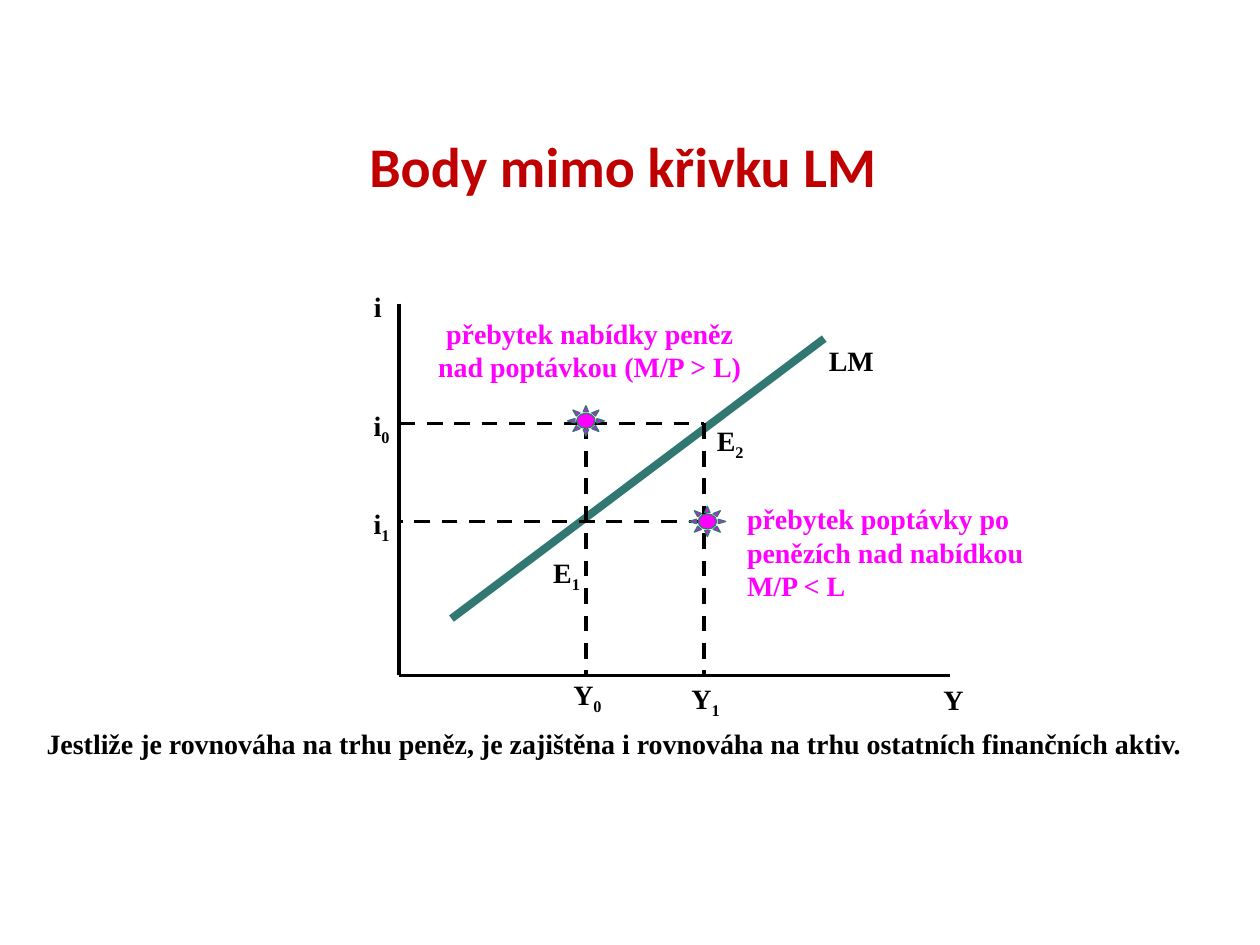
from lxml import etree
from pptx import Presentation
from pptx.dml.color import RGBColor
from pptx.enum import dml, shapes, text
from pptx.oxml.ns import qn
from pptx.util import Pt

BLACK = RGBColor(0x00, 0x00, 0x00)
RED = RGBColor(0xC0, 0x00, 0x00)
TEAL = RGBColor(0x30, 0x78, 0x71)
MAGENTA = RGBColor(0xFF, 0x00, 0xFF)
LEFT, CENTER = text.PP_ALIGN.LEFT, text.PP_ALIGN.CENTER

# Chart geometry in points
ORIGIN_X, ORIGIN_Y = 228.25, 386
AXIS_TOP, AXIS_RIGHT = 173.5, 543
I0, I1 = 242, 298
Y0, Y1 = 334.8, 402.5


def format_font(font, **values):
    color = values.pop("color")
    for name, value in values.items():
        setattr(font, name, value)
    font.color.rgb = color


def add_text(slide, box, content, color=BLACK, subscript="", align=LEFT):
    shape = slide.shapes.add_textbox(*map(Pt, box))
    shape.text_frame.word_wrap = True
    paragraph = shape.text_frame.paragraphs[0]
    paragraph.alignment = align
    for part in filter(None, (content, subscript)):
        run = paragraph.add_run()
        run.text = part
        format_font(run.font, name="Times New Roman", size=Pt(16), bold=True, color=color)
    if subscript:
        run._r.get_or_add_rPr().set("baseline", "-25000")


presentation = Presentation()
presentation.slide_width, presentation.slide_height = Pt(720), Pt(540)
slide = presentation.slides.add_slide(presentation.slide_layouts[5])

# Title
title = slide.shapes.title
title.left, title.top, title.width, title.height = map(Pt, (100.8, 71.3, 510.5, 40.3))
title.text = "Body mimo křivku LM"
title.text_frame.auto_size = text.MSO_AUTO_SIZE.NONE
title.text_frame.vertical_anchor = text.MSO_ANCHOR.TOP
paragraph = title.text_frame.paragraphs[0]
paragraph.alignment = CENTER
format_font(paragraph.runs[0].font, name="Calibri", size=Pt(32), bold=True, color=RED)

# Axes, LM curve and dashed guides
lines = [
    (ORIGIN_X, AXIS_TOP, ORIGIN_X, ORIGIN_Y, BLACK, 2.25, False),
    (ORIGIN_X, ORIGIN_Y, AXIS_RIGHT, ORIGIN_Y, BLACK, 2.25, False),
    (258, 353.5, 471, 193.5, TEAL, 4.5, False),
    (ORIGIN_X, I0, Y1, I0, BLACK, 2.25, True),
    (Y1, I0, Y1, ORIGIN_Y, BLACK, 2.25, True),
    (Y0, I0, Y0, ORIGIN_Y, BLACK, 2.25, True),
    (Y1, I1, ORIGIN_X, I1, BLACK, 2.25, True),
]
for *ends, color, width, dashed in lines:
    connector = slide.shapes.add_connector(shapes.MSO_CONNECTOR.STRAIGHT, *map(Pt, ends))
    connector.line.color.rgb = color
    connector.line.width = Pt(width)
    if dashed:
        connector.line.dash_style = dml.MSO_LINE.DASH
    etree.SubElement(connector._element.spPr, qn("a:effectLst"))

# Axis and point labels: left, top, width, letter, subscript
labels = [
    (532, 386.5, 25.5, "Y", ""),
    (206.5, 162, 17.5, "i", ""),
    (466.5, 192.5, 51, "LM", ""),
    (206.5, 229.7, 25.5, "i", "0"),
    (206.5, 286, 25.5, "i", "1"),
    (320.5, 383.7, 37, "Y", "0"),
    (388, 386, 46, "Y", "1"),
    (309, 314, 38, "E", "1"),
    (402.5, 238.3, 38, "E", "2"),
]
for left, top, width, letter, subscript in labels:
    add_text(slide, (left, top, width, 26.5), letter, subscript=subscript)

# Points off the curve
SUN_WIDTH, SUN_HEIGHT = 21, 17.3
for center_x, center_y in ((Y0, 240.5), (404.2, I1)):
    sun = slide.shapes.add_shape(
        shapes.MSO_SHAPE.SUN, Pt(center_x - SUN_WIDTH / 2), Pt(center_y - SUN_HEIGHT / 2),
        Pt(SUN_WIDTH), Pt(SUN_HEIGHT))
    sun.shadow.inherit = False
    sun.fill.solid()
    sun.fill.fore_color.rgb = MAGENTA
    sun.line.color.rgb = TEAL
    sun.line.width = Pt(0.75)

# Explanations and conclusion
add_text(slide, (241.2, 177.1, 191.5, 46), "přebytek nabídky peněz nad poptávkou (M/P > L)",
         MAGENTA, align=CENTER)
add_text(slide, (419.8, 283, 191.5, 65.5),
         "přebytek poptávky po penězích nad nabídkou M/P < L", MAGENTA)
add_text(slide, (19.5, 411.8, 686, 26.5),
         "Jestliže je rovnováha na trhu peněz, je zajištěna i rovnováha na trhu "
         "ostatních finančních aktiv.")

presentation.save("out.pptx")
